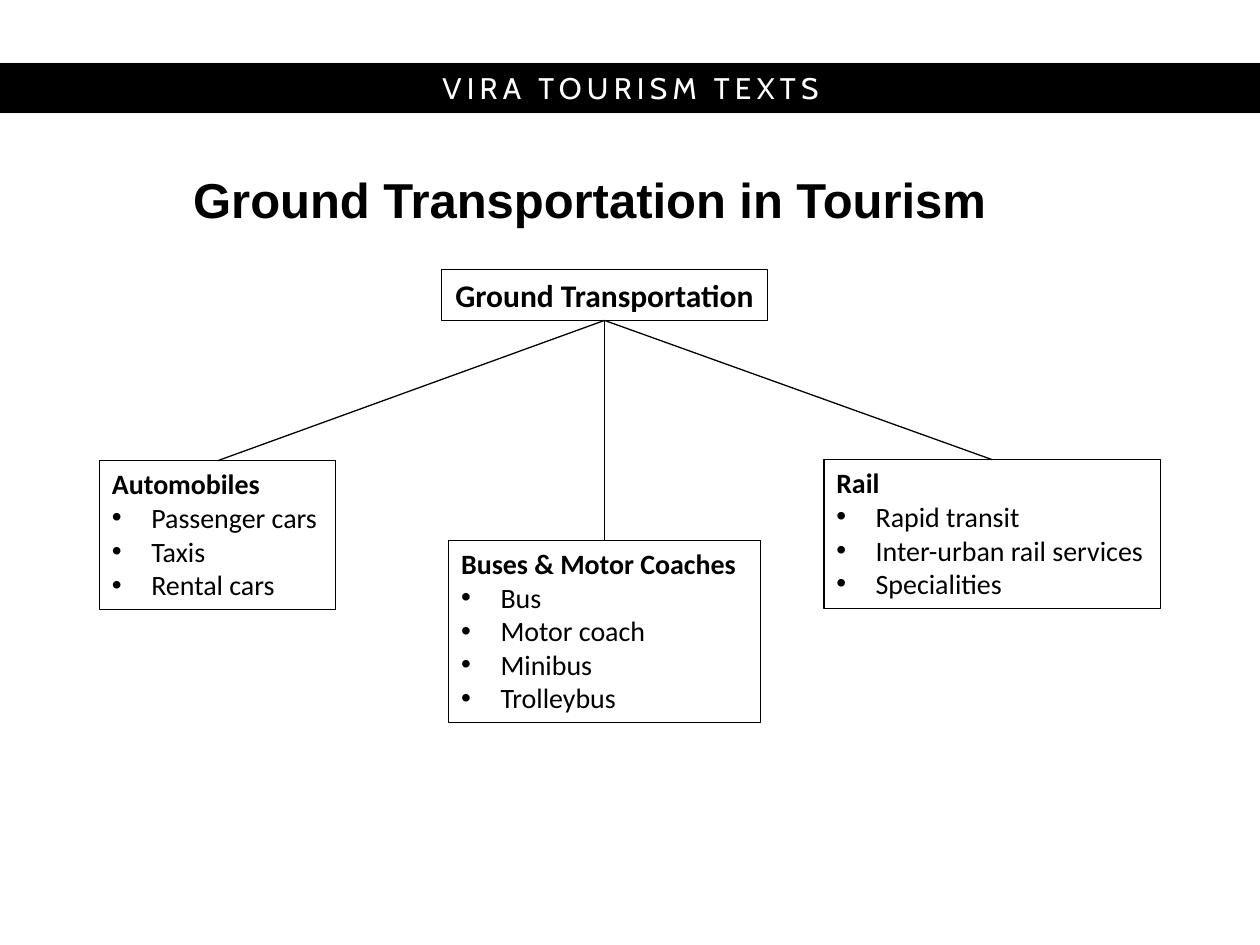
import pptx
import pptx.util
import pptx.dml.color
import pptx.enum.shapes
import pptx.enum.text
import pptx.oxml.ns
from lxml import etree

Pt = pptx.util.Pt
ALIGN = pptx.enum.text.PP_ALIGN
ANCHOR = pptx.enum.text.MSO_ANCHOR
FIT = pptx.enum.text.MSO_AUTO_SIZE
RECT = pptx.enum.shapes.MSO_SHAPE.RECTANGLE
LINE = pptx.enum.shapes.MSO_CONNECTOR.STRAIGHT
qn = pptx.oxml.ns.qn

# Content: places are left, top, width, height in points
BAND = ("VIRA TOURISM TEXTS", (-5.76, 35.6, 732.24, 29.3))
TITLE = ("Ground Transportation in Tourism", (103.2, 97.2, 566.6, 34.6))
ROOT = ("Ground Transportation", (252.2, 154.1, 186.5, 29))
MODES = [
    ("Automobiles", ["Passenger cars", "Taxis", "Rental cars"],
     (56.9, 263.3, 134.9, 85)),
    ("Buses & Motor Coaches", ["Bus", "Motor coach", "Minibus", "Trolleybus"],
     (256.45, 308.8, 178, 104)),
    ("Rail", ["Rapid transit", "Inter-urban rail services", "Specialities"],
     (470.8, 262.7, 192.5, 85)),
]
INDENT = 22.5


def color(code):
    return pptx.dml.color.RGBColor.from_string(code)


def write(para, text, face, size, bold=False, ink="000000"):
    run = para.add_run()
    run.text = text
    font = run.font
    font.name, font.size, font.bold = face, Pt(size), bold
    font.color.rgb = color(ink)
    return run


def stroke(line, code="000000"):
    line.color.rgb = color(code)
    line.width = Pt(0.75)


def box(place, edge="000000", fill=None):
    shape = slide.shapes.add_shape(RECT, *map(Pt, place))
    shape.shadow.inherit = False
    stroke(shape.line, edge)
    if fill:
        shape.fill.solid()
        shape.fill.fore_color.rgb = color(fill)
    else:
        shape.fill.background()
    return shape


def node(place, head, size, align):
    shape = box(place)
    frame = shape.text_frame
    frame.word_wrap = False
    frame.auto_size = FIT.SHAPE_TO_FIT_TEXT
    frame.vertical_anchor = ANCHOR.TOP
    para = frame.paragraphs[0]
    para.alignment = align
    write(para, head, "Calibri", size, True)
    return shape


def bullet(para):
    props = para._p.get_or_add_pPr()
    props.set("marL", str(Pt(INDENT)))
    props.set("indent", str(-Pt(INDENT)))
    etree.SubElement(props, qn("a:buFont")).set("typeface", "Arial")
    etree.SubElement(props, qn("a:buChar")).set("char", "•")


def link(start, end):
    line = slide.shapes.add_connector(LINE, *map(Pt, start + end))
    stroke(line.line)
    etree.SubElement(line._element.spPr, qn("a:effectLst"))


def middle(place):
    return round(place[0] + place[2] / 2, 2)


deck = pptx.Presentation()
deck.slide_width, deck.slide_height = Pt(720), Pt(540)
slide = deck.slides.add_slide(deck.slide_layouts[5])

# Series band
text, place = BAND
frame = box(place, "F2F2F2", "000000").text_frame
frame.vertical_anchor = ANCHOR.MIDDLE
para = frame.paragraphs[0]
para.alignment = ALIGN.CENTER
run = write(para, text, "Cabin", 17, ink="FFFFFF")
run._r.get_or_add_rPr().set("spc", "300")

# Title
text, place = TITLE
title = slide.shapes.title
title.left, title.top, title.width, title.height = map(Pt, place)
frame = title.text_frame
frame.word_wrap = True
frame.auto_size = FIT.NONE
frame.vertical_anchor = ANCHOR.MIDDLE
para = frame.paragraphs[0]
para.alignment = ALIGN.LEFT
para.line_spacing = Pt(32)
write(para, text, "Arial", 28, True)

# Tree: root, then each mode with its link
text, root = ROOT
node(root, text, 18, ALIGN.CENTER)
start = (middle(root), root[1] + root[3])
for head, items, place in MODES:
    frame = node(place, head, 16, ALIGN.LEFT).text_frame
    for item in items:
        para = frame.add_paragraph()
        para.alignment = ALIGN.LEFT
        bullet(para)
        write(para, item, "Calibri", 16)
    link(start, (middle(place), place[1]))

deck.save("out.pptx")
